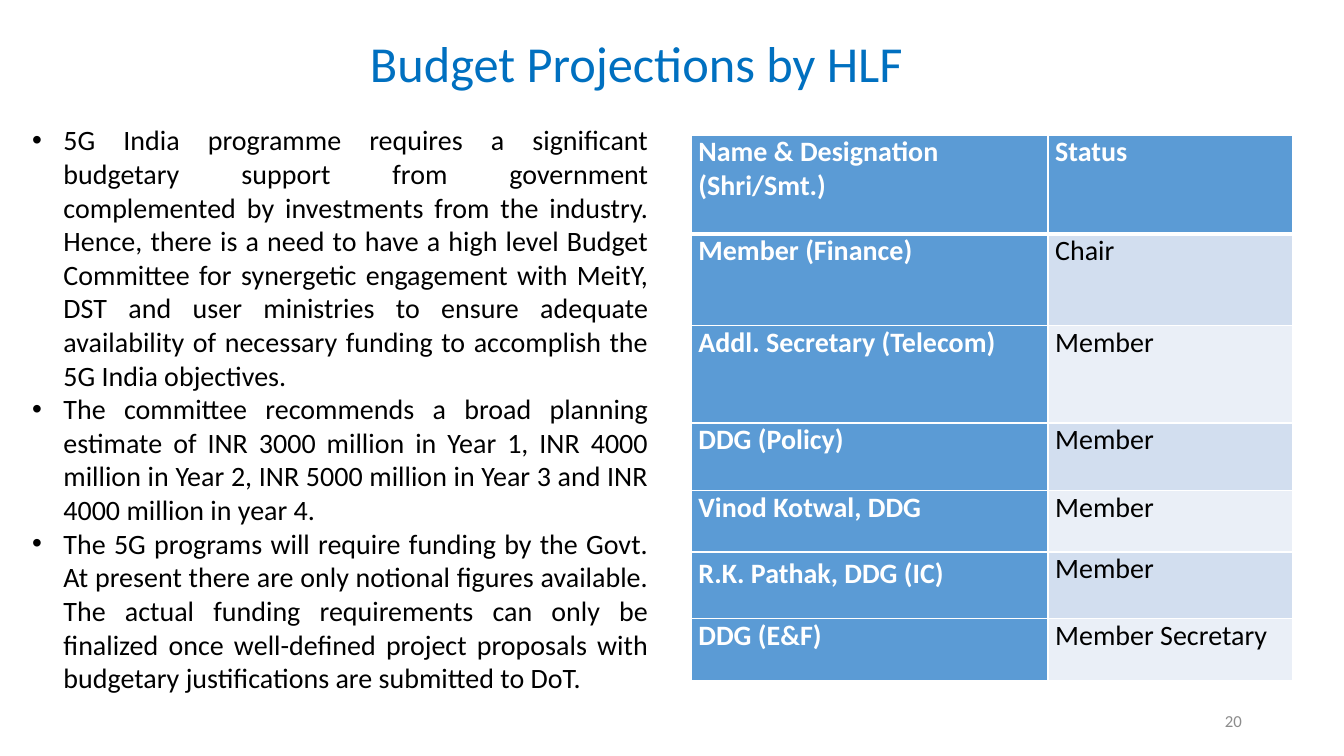
from lxml import etree
from pptx import Presentation
from pptx.dml.color import RGBColor
from pptx.enum.text import MSO_ANCHOR, PP_ALIGN
from pptx.oxml.ns import qn
from pptx.util import Cm, Pt

LEFT, RIGHT, FULL = PP_ALIGN.LEFT, PP_ALIGN.RIGHT, PP_ALIGN.JUSTIFY
TOP, MIDDLE = MSO_ANCHOR.TOP, MSO_ANCHOR.MIDDLE

BLACK = RGBColor(0x00, 0x00, 0x00)
WHITE = RGBColor(0xFF, 0xFF, 0xFF)
GREY = RGBColor(0x8C, 0x8C, 0x8C)
TITLE = RGBColor(0x00, 0x70, 0xC0)
BLUE = RGBColor(0x5B, 0x9B, 0xD5)
BANDS = [RGBColor(0xEA, 0xEF, 0xF7), RGBColor(0xD2, 0xDE, 0xEF)]

FONT = "Calibri"
INDENT = Cm(0.79)

POINTS = [
    "5G India programme requires a significant budgetary support from "
    "government complemented by investments from the industry. Hence, there "
    "is a need to have a high level Budget Committee for synergetic "
    "engagement with MeitY, DST and user ministries to ensure adequate "
    "availability of necessary funding to accomplish the 5G India objectives.",
    "The committee recommends a broad planning estimate of INR 3000 million "
    "in Year 1, INR 4000 million in Year 2, INR 5000 million in Year 3 and "
    "INR 4000 million in year 4.",
    "The 5G programs will require funding by the Govt. At present there are "
    "only notional figures available. The actual funding requirements can "
    "only be finalized once well-defined project proposals with budgetary "
    "justifications are submitted to DoT.",
]

WIDTHS = [8.99, 6.17]
ROWS = [
    (2.49, "Name & Designation (Shri/Smt.)", "Status"),
    (2.31, "Member (Finance)", "Chair"),
    (2.46, "Addl. Secretary (Telecom)", "Member"),
    (1.70, "DDG (Policy)", "Member"),
    (1.55, "Vinod Kotwal, DDG", "Member"),
    (1.68, "R.K. Pathak, DDG (IC)", "Member"),
    (1.55, "DDG (E&F)", "Member Secretary"),
]
SPACED = "R.K. Pathak, DDG (IC)"


def apply(item, form):
    for key, value in form.items():
        setattr(item, key, value)


def place(shape, left, top, width, height):
    apply(shape, {"left": Cm(left), "top": Cm(top),
                  "width": Cm(width), "height": Cm(height)})


def write(para, text, size, color, align=LEFT, bold=False):
    para.alignment = align
    run = para.add_run()
    run.text = text
    apply(run.font, {"name": FONT, "size": Pt(size), "bold": bold})
    run.font.color.rgb = color


def add_title(slide, text):
    title = slide.shapes.title
    place(title, 9.07, 0.69, 19.84, 1.8)
    apply(title.text_frame, {"word_wrap": True, "vertical_anchor": TOP})
    write(title.text_frame.paragraphs[0], text, 36, TITLE)


def add_box(slide, spot, anchor):
    box = slide.shapes.add_textbox(0, 0, 0, 0)
    place(box, *spot)
    apply(box.text_frame, {"word_wrap": True, "vertical_anchor": anchor})
    return box.text_frame


def add_bullet(para):
    props = para._p.get_or_add_pPr()
    props.set("marL", str(INDENT))
    props.set("indent", str(-INDENT))
    etree.SubElement(props, qn("a:buFont")).set("typeface", "Arial")
    etree.SubElement(props, qn("a:buChar")).set("char", "•")


def add_points(slide):
    frame = add_box(slide, (0.56, 2.97, 16.03, 15.57), TOP)
    for i, text in enumerate(POINTS):
        para = frame.add_paragraph() if i else frame.paragraphs[0]
        write(para, text, 20, BLACK, FULL)
        add_bullet(para)


def add_edges(cell, widths):
    props = cell._tc.get_or_add_tcPr()
    for i, (side, width) in enumerate(widths.items()):
        line = etree.Element(qn("a:ln" + side), w=str(Pt(width)))
        fill = etree.SubElement(line, qn("a:solidFill"))
        etree.SubElement(fill, qn("a:srgbClr")).set("val", str(WHITE))
        props.insert(i, line)


def fill_cell(cell, text, row, col):
    head = row == 0 or col == 0
    apply(cell, {"margin_left": Cm(0.18), "margin_right": Cm(0.18),
                 "margin_top": 0, "margin_bottom": 0,
                 "vertical_anchor": TOP})
    cell.fill.solid()
    cell.fill.fore_color.rgb = BLUE if head else BANDS[row % 2]
    para = cell.text_frame.paragraphs[0]
    write(para, text, 20, WHITE if head else BLACK, bold=head)
    if text == SPACED:
        apply(para, {"alignment": FULL, "line_spacing": 1.15})
    add_edges(cell, {"L": 1, "R": 1, "T": 3 if row == 1 else 1,
                     "B": 3 if row == 0 else 1})


def add_grid(slide):
    high = sum(row[0] for row in ROWS)
    grid = slide.shapes.add_table(
        len(ROWS), len(WIDTHS), Cm(17.42), Cm(3.4),
        Cm(sum(WIDTHS)), Cm(high)).table
    for col, width in zip(grid.columns, WIDTHS):
        col.width = Cm(width)
    for r, (height, *texts) in enumerate(ROWS):
        grid.rows[r].height = Cm(height)
        for c, text in enumerate(texts):
            fill_cell(grid.cell(r, c), text, r, c)


def add_number(slide, text):
    frame = add_box(slide, (23.93, 17.65, 7.62, 1.02), MIDDLE)
    write(frame.paragraphs[0], text, 12, GREY, RIGHT)


def main():
    deck = Presentation()
    apply(deck, {"slide_width": Cm(33.87), "slide_height": Cm(19.05)})
    slide = deck.slides.add_slide(deck.slide_layouts.get_by_name("Title Only"))
    add_title(slide, "Budget Projections by HLF")
    add_points(slide)
    add_number(slide, "20")
    add_grid(slide)
    deck.save("out.pptx")


if __name__ == "__main__":
    main()
